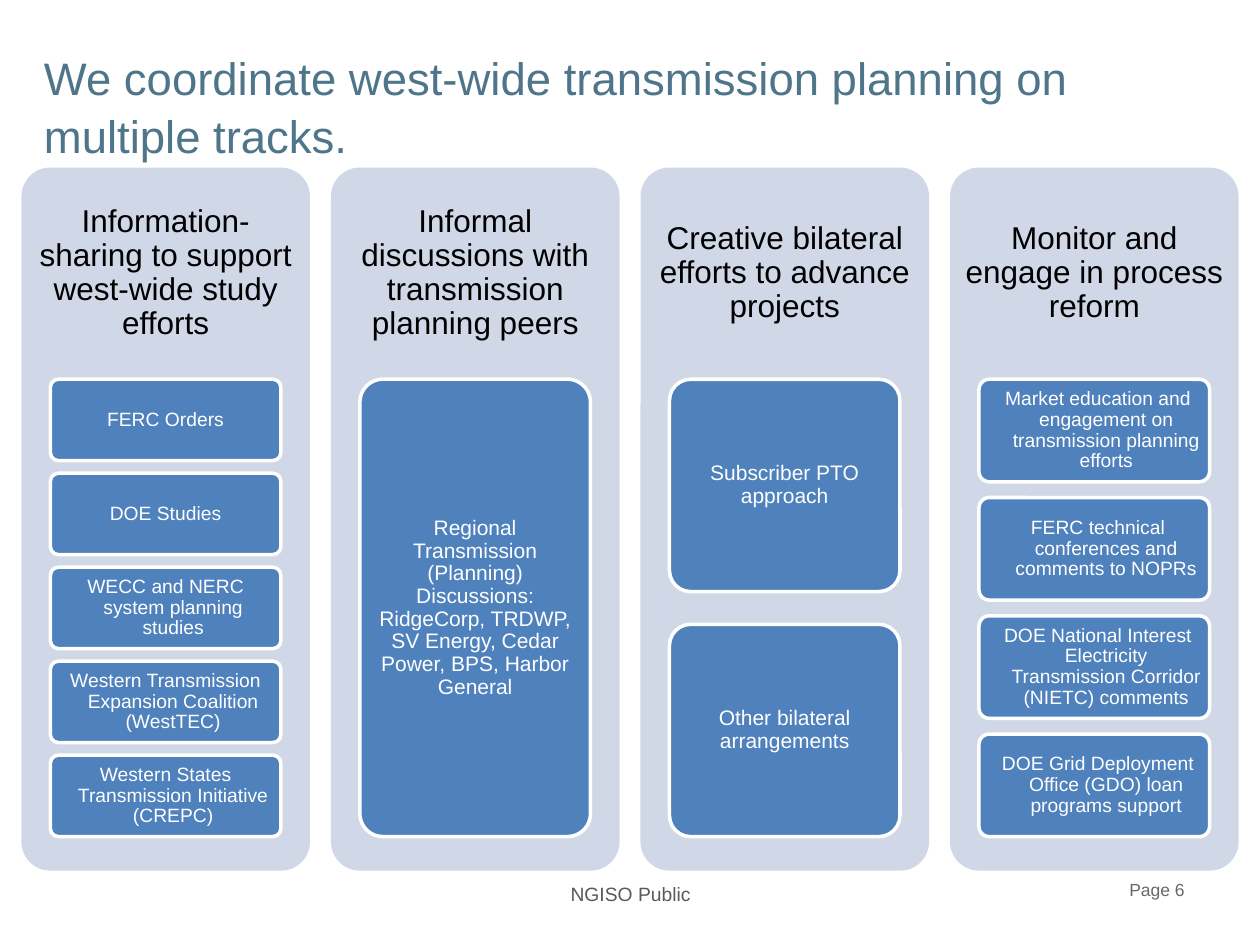
from pptx import Presentation
from pptx.dml.color import RGBColor
from pptx.enum.shapes import MSO_SHAPE as Shape
from pptx.enum.text import MSO_ANCHOR as Anchor, PP_ALIGN as Align
from pptx.util import Inches, Pt

TITLE = "We coordinate west-wide transmission planning on multiple tracks."
FOOTER = "NGISO Public"
PAGE = "Page 6"
TRACKS = [
    {"heading": "Information-sharing to support west-wide study efforts",
     "size": 11, "margin": 0.12, "indent": -0.12,
     "items": ["FERC Orders", "DOE Studies",
               "WECC and NERC system planning studies",
               "Western Transmission Expansion Coalition (WestTEC)",
               "Western States Transmission Initiative (CREPC)"]},
    {"heading": "Informal discussions with transmission planning peers",
     "size": 12, "margin": 0, "indent": 0,
     "items": ["Regional Transmission (Planning) Discussions: RidgeCorp, TRDWP, "
               "SV Energy, Cedar Power, BPS, Harbor General"]},
    {"heading": "Creative bilateral efforts to advance projects",
     "size": 12, "margin": 0, "indent": 0,
     "items": ["Subscriber PTO approach", "Other bilateral arrangements"]},
    {"heading": "Monitor and engage in process reform",
     "size": 11, "margin": 0.19, "indent": -0.13,
     "items": ["Market education and engagement on transmission planning efforts",
               "FERC technical conferences and comments to NOPRs",
               "DOE National Interest Electricity Transmission Corridor (NIETC) comments",
               "DOE Grid Deployment Office (GDO) loan programs support"]},
]

FONT = "Arial"
TEAL = RGBColor(0x4F, 0x75, 0x8B)
PALE = RGBColor(0xD0, 0xD8, 0xE8)
BLUE = RGBColor(0x4F, 0x81, 0xBD)
WHITE = RGBColor(0xFF, 0xFF, 0xFF)
BLACK = RGBColor(0, 0, 0)
FOOTER_GREY = RGBColor(0x59, 0x59, 0x59)
PAGE_GREY = RGBColor(0x68, 0x68, 0x68)

LEFT, RIGHT, TOP = 0.17, 9.83, 1.33
TRACK_W, TRACK_H, HEADING_H = 2.29, 5.58, 1.68
ITEM_W, ITEMS_H, GAP_RATIO = 1.83, 3.63, 2 / 13


def write(shape, text, size, color, align=Align.CENTER, anchor=Anchor.MIDDLE,
          insets=(0.1, 0.05), spacing=None, margin=0, indent=0):
    frame = shape.text_frame
    frame.word_wrap = True
    frame.vertical_anchor = anchor
    frame.margin_left = frame.margin_right = Inches(insets[0])
    frame.margin_top = frame.margin_bottom = Inches(insets[1])
    paragraph = frame.paragraphs[0]
    paragraph.alignment = align
    if spacing:
        paragraph.line_spacing = spacing
    if margin:
        properties = paragraph._p.get_or_add_pPr()
        properties.set("marL", str(Inches(margin)))
        properties.set("indent", str(Inches(indent)))
    run = paragraph.add_run()
    run.text = text
    run.font.name, run.font.size = FONT, Pt(size)
    run.font.color.rgb = color


def text_box(slide, place, text, **style):
    write(slide.shapes.add_textbox(*map(Inches, place)), text, **style)


def card(slide, place, fill, outlined=False):
    panel = slide.shapes.add_shape(Shape.ROUNDED_RECTANGLE, *map(Inches, place))
    panel.adjustments[0] = 0.1
    panel.shadow.inherit = False
    panel.fill.solid()
    panel.fill.fore_color.rgb = fill
    if outlined:
        panel.line.color.rgb = WHITE
        panel.line.width = Pt(2)
    else:
        panel.line.fill.background()
    return panel


def draw_track(slide, left, track):
    card(slide, (left, TOP, TRACK_W, TRACK_H), PALE)
    text_box(slide, (left, TOP, TRACK_W, HEADING_H), track["heading"],
             size=18, color=BLACK, insets=(0.07, 0.07), spacing=0.9)
    count = len(track["items"])
    height = ITEMS_H / (count + (count - 1) * GAP_RATIO)
    item_left = left + (TRACK_W - ITEM_W) / 2
    for row, item in enumerate(track["items"]):
        top = TOP + HEADING_H + row * height * (1 + GAP_RATIO)
        write(card(slide, (item_left, top, ITEM_W, height), BLUE, outlined=True),
              item, size=track["size"], color=WHITE, insets=(0.03, 0.02),
              spacing=0.9, margin=track["margin"], indent=track["indent"])


def main():
    deck = Presentation()
    deck.slide_width, deck.slide_height = Inches(10), Inches(7.5)
    slide = deck.slides.add_slide(deck.slide_layouts[6])
    text_box(slide, (3.88, 6.95, 2.25, 0.29), FOOTER, size=11,
             color=FOOTER_GREY, anchor=Anchor.TOP)
    text_box(slide, (0.25, 0.33, 9.58, 1.25), TITLE, size=26, color=TEAL,
             align=Align.LEFT, anchor=Anchor.TOP, spacing=1.05)
    pitch = (RIGHT - LEFT - TRACK_W) / (len(TRACKS) - 1)
    for column, track in enumerate(TRACKS):
        draw_track(slide, LEFT + column * pitch, track)
    text_box(slide, (7.17, 6.93, 2.33, 0.4), PAGE, size=10,
             color=PAGE_GREY, align=Align.RIGHT, anchor=Anchor.TOP)
    deck.save("out.pptx")


if __name__ == "__main__":
    main()
